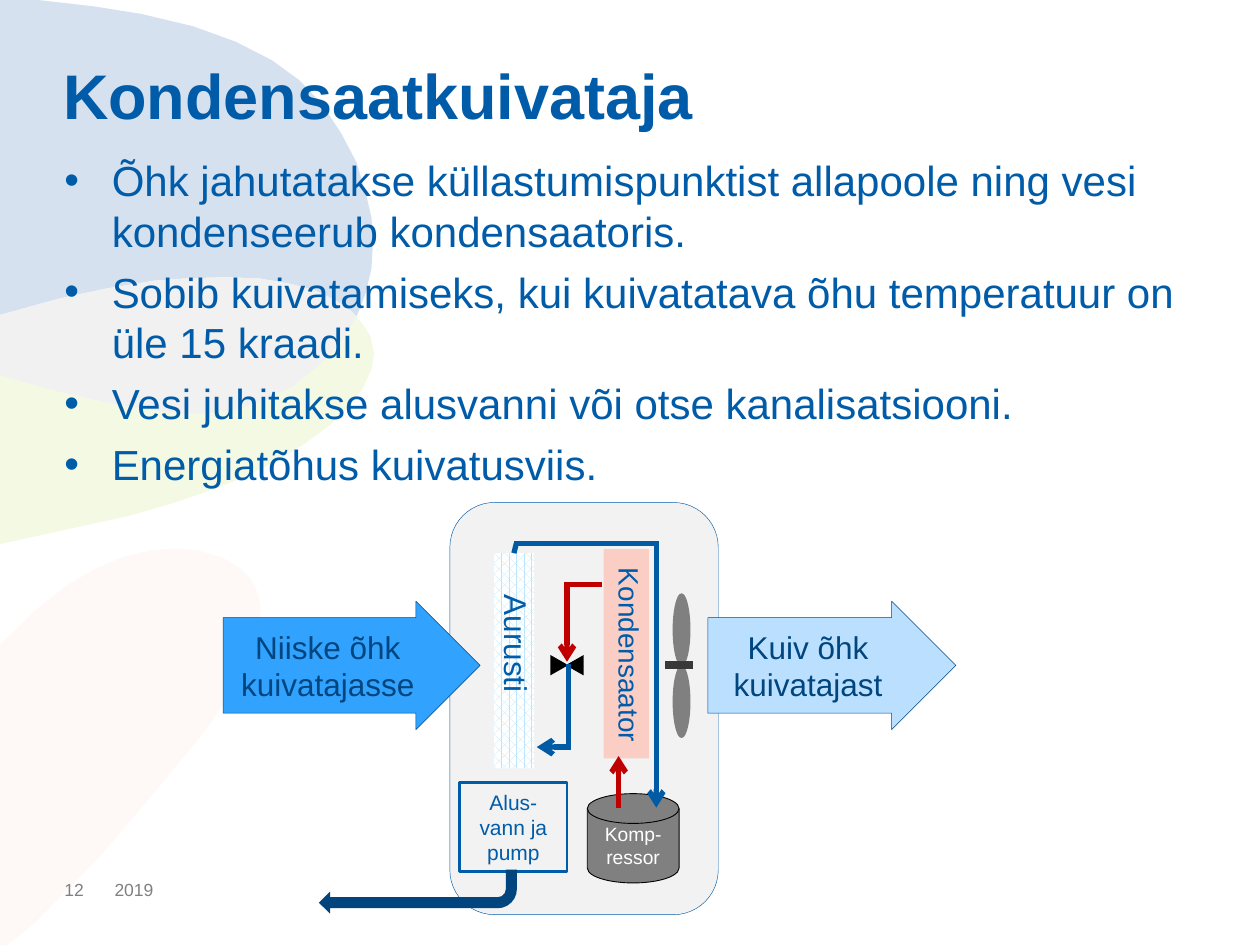
from lxml import etree
from pptx import Presentation
from pptx.dml.color import RGBColor
from pptx.enum.dml import MSO_PATTERN
from pptx.enum.shapes import MSO_CONNECTOR, MSO_SHAPE
from pptx.enum.text import MSO_ANCHOR, MSO_AUTO_SIZE, PP_ALIGN
from pptx.oxml.ns import qn
from pptx.util import Cm, Pt

STRAIGHT = MSO_CONNECTOR.STRAIGHT
PERCENT_60 = MSO_PATTERN.PERCENT_60
RECTANGLE = MSO_SHAPE.RECTANGLE
ROUNDED = MSO_SHAPE.ROUNDED_RECTANGLE
TRIANGLE = MSO_SHAPE.ISOSCELES_TRIANGLE
DISK = MSO_SHAPE.FLOWCHART_MAGNETIC_DISK
RIGHT_ARROW = MSO_SHAPE.RIGHT_ARROW
BENT_ARROW = MSO_SHAPE.BENT_ARROW
OVAL = MSO_SHAPE.OVAL
TOP, MIDDLE = MSO_ANCHOR.TOP, MSO_ANCHOR.MIDDLE
LEFT, CENTER = PP_ALIGN.LEFT, PP_ALIGN.CENTER
NO_AUTOFIT = MSO_AUTO_SIZE.NONE

FONT = "Arial"
BLUE, NAVY, PIPE_BLUE, PIPE_RED, GREY = "005CA8", "00457E", "005AA4", "C00000", "808080"


def paint(fill, colour):
    fill.solid()
    fill.fore_color.rgb = RGBColor.from_string(colour)


def write(paragraph, text, size, colour, alignment=LEFT, bold=False):
    paragraph.alignment = alignment
    run = paragraph.add_run()
    run.text = text
    run.font.name = FONT
    run.font.size = Pt(size)
    run.font.bold = bold
    paint(run.font.fill, colour)


presentation = Presentation()
presentation.slide_width, presentation.slide_height = Cm(25.4), Cm(19.05)
slide = presentation.slides.add_slide(presentation.slide_layouts[1])
shapes = slide.shapes
title, body = shapes.title, slide.placeholders[1]

# Background petals, in hundredths of a centimetre
overlap_top = [
    (0, 635), (119, 602), (213, 582), (310, 566), (381, 561), (452, 559),
    (521, 561), (584, 572), (632, 584), (676, 605), (706, 625), (719, 638),
]
overlap_bottom = [
    (719, 638), (693, 681), (660, 721), (627, 749), (589, 780), (536, 805), (478, 826),
    (419, 833), (366, 833), (295, 826), (208, 810), (109, 787), (0, 757),
]
green_edge = [
    (0, 1097), (150, 1064), (264, 1039), (353, 1013), (417, 991), (490, 963), (556, 930),
    (615, 894), (663, 859), (704, 820), (732, 782), (749, 744), (754, 714), (747, 678), (732, 655),
]
blue_edge = [
    (737, 592), (749, 541), (752, 488), (749, 439), (739, 396), (719, 328), (688, 269),
    (650, 211), (605, 163), (549, 122), (475, 84), (389, 53), (284, 28), (190, 13), (76, 0),
]
peach_petal = [
    (353, 1105), (302, 1110), (249, 1123), (193, 1146), (137, 1179), (81, 1222), (36, 1265),
    (0, 1300), (0, 1905), (15, 1905), (69, 1862), (122, 1808), (201, 1727), (279, 1636),
    (353, 1547), (414, 1473), (460, 1405), (493, 1346), (516, 1288), (526, 1232), (521, 1199),
    (505, 1166), (480, 1143), (450, 1125), (401, 1110),
]
petals = [
    (peach_petal, "FEF9F7"),
    (overlap_bottom + green_edge, "F3F9E3"),
    ([(0, 0)] + overlap_top + blue_edge, "D6E1F0"),
    (overlap_top + overlap_bottom, "F1F1F1"),
]
for points, colour in petals:
    builder = shapes.build_freeform(*points[0], scale=Cm(0.01))
    builder.add_line_segments(points[1:], close=True)
    petal = builder.convert_to_shape()
    petal.shadow.inherit = False
    paint(petal.fill, colour)
    petal.line.fill.background()
    title.element.addprevious(petal.element)

title.left, title.top, title.width, title.height = Cm(1.27), Cm(1.32), Cm(22.86), Cm(3.2)
body.left, body.top, body.width, body.height = Cm(1.3), Cm(3.12), Cm(22.83), Cm(13)
for placeholder in (title, body):
    frame = placeholder.text_frame
    frame.margin_left = frame.margin_right = frame.margin_top = frame.margin_bottom = 0
    frame.vertical_anchor = TOP
    frame.auto_size = NO_AUTOFIT

heading = title.text_frame.paragraphs[0]
heading.line_spacing = 0.9
write(heading, "Kondensaatkuivataja", 36, BLUE, bold=True)

bullets = [
    "Õhk jahutatakse küllastumispunktist allapoole ning vesi kondenseerub kondensaatoris.",
    "Sobib kuivatamiseks, kui kuivatatava õhu temperatuur on üle 15 kraadi.",
    "Vesi juhitakse alusvanni või otse kanalisatsiooni.",
    "Energiatõhus kuivatusviis.",
]
for index, text in enumerate(bullets):
    paragraph = body.text_frame.add_paragraph() if index else body.text_frame.paragraphs[0]
    paragraph.space_before = Pt(6 if index else 0)
    write(paragraph, text, 24, BLUE)

# kind, left, top, width, height, rotation, fill, line colour and width, text, size, colour
parts = [
    (ROUNDED, 9.07, 10.13, 5.41, 8.31, 0, "F2F2F2", (BLUE, 0.25), None),
    (TRIANGLE, 11.07, 13.23, 0.41, 0.36, 90, "000000", None, None),
    (TRIANGLE, 11.38, 13.23, 0.41, 0.36, 270, "000000", None, None),
    (RECTANGLE, 9.96, 11.15, 0.81, 4.34, 0, "pattern", None, None),
    (RECTANGLE, 12.17, 11.07, 0.91, 4.22, 0, "FBCEC5", None, None),
    (DISK, 11.84, 16, 1.85, 1.8, 0, GREY, ("000000", 0.5), ("Komp-ressor", 11, "FFFFFF")),
    (RIGHT_ARROW, 4.5, 12.12, 5.18, 2.59, 0, "32A2FF", (NAVY, 0.25),
     ("Niiske õhk kuivatajasse", 18, NAVY)),
    (RIGHT_ARROW, 14.27, 12.12, 5, 2.59, 0, "BBE0FF", (NAVY, 0.25),
     ("Kuiv õhk kuivatajast", 18, NAVY)),
    (RECTANGLE, 9.27, 15.77, 2.16, 1.8, 0, None, (BLUE, 1.5), ("Alus-vann ja pump", 12, BLUE)),
    (BENT_ARROW, 6.43, 17.53, 3.99, 0.89, 180, NAVY, None, None),
    (OVAL, 13.56, 11.96, 0.36, 1.47, 0, GREY, None, None),
    (OVAL, 13.56, 13.41, 0.36, 1.47, 0, GREY, None, None),
]
for kind, left, top, width, height, rotation, fill, outline, label in parts:
    shape = shapes.add_shape(kind, Cm(left), Cm(top), Cm(width), Cm(height))
    shape.shadow.inherit = False
    shape.rotation = rotation
    if kind == RIGHT_ARROW:
        shape.adjustments[0] = 0.743
    if fill == "pattern":
        shape.fill.patterned()
        shape.fill.pattern = PERCENT_60
        shape.fill.fore_color.rgb = RGBColor.from_string("BDE7F9")
        shape.fill.back_color.rgb = RGBColor.from_string("FFFFFF")
    elif fill:
        paint(shape.fill, fill)
    else:
        shape.fill.background()
    if outline:
        paint(shape.line.fill, outline[0])
        shape.line.width = Pt(outline[1])
    else:
        shape.line.fill.background()
    if label:
        shape.text_frame.vertical_anchor = MIDDLE
        write(shape.text_frame.paragraphs[0], *label, alignment=CENTER)

# start x, start y, end x, end y, colour, width, arrowhead at the end
pipes = [
    (11.46, 15.09, 11.46, 13.39, PIPE_BLUE, 3, False),
    (12.14, 11.79, 11.43, 11.79, PIPE_RED, 3, False),
    (11.43, 11.73, 11.43, 13.34, PIPE_RED, 3, True),
    (11.51, 15.06, 10.82, 15.06, PIPE_BLUE, 3, True),
    (13.23, 10.95, 13.23, 16.28, PIPE_BLUE, 3, True),
    (10.41, 10.95, 10.36, 11.15, PIPE_BLUE, 3, False),
    (10.36, 10.95, 13.28, 10.95, PIPE_BLUE, 3, False),
    (12.47, 16.28, 12.47, 15.24, PIPE_RED, 3, True),
    (13.41, 13.41, 13.97, 13.41, "383838", 4.5, False),
]
for start_x, start_y, end_x, end_y, colour, width, arrowhead in pipes:
    pipe = shapes.add_connector(STRAIGHT, Cm(start_x), Cm(start_y), Cm(end_x), Cm(end_y))
    paint(pipe.line.fill, colour)
    pipe.line.width = Pt(width)
    properties = pipe.element.spPr
    if arrowhead:
        etree.SubElement(properties.find(qn("a:ln")), qn("a:tailEnd"), type="arrow")
    etree.SubElement(properties, qn("a:effectLst"))

labels = [
    ("Aurusti", 8.99, 12.65, 2.84, 1.02, 90, 18, BLUE),
    ("Kondensaator", 10.52, 12.9, 4.34, 0.94, 90, 16, BLUE),
    ("2019", 2.31, 17.73, 2.39, 0.39, 0, 10, GREY),
    ("12", 1.3, 17.73, 0.99, 0.39, 0, 10, GREY),
]
for text, left, top, width, height, rotation, size, colour in labels:
    box = shapes.add_textbox(Cm(left), Cm(top), Cm(width), Cm(height))
    box.rotation = rotation
    frame = box.text_frame
    frame.word_wrap = True
    if not rotation:
        frame.margin_left = frame.margin_right = frame.margin_top = frame.margin_bottom = 0
        frame.vertical_anchor = MIDDLE
    write(frame.paragraphs[0], text, size, colour)

presentation.save("out.pptx")
